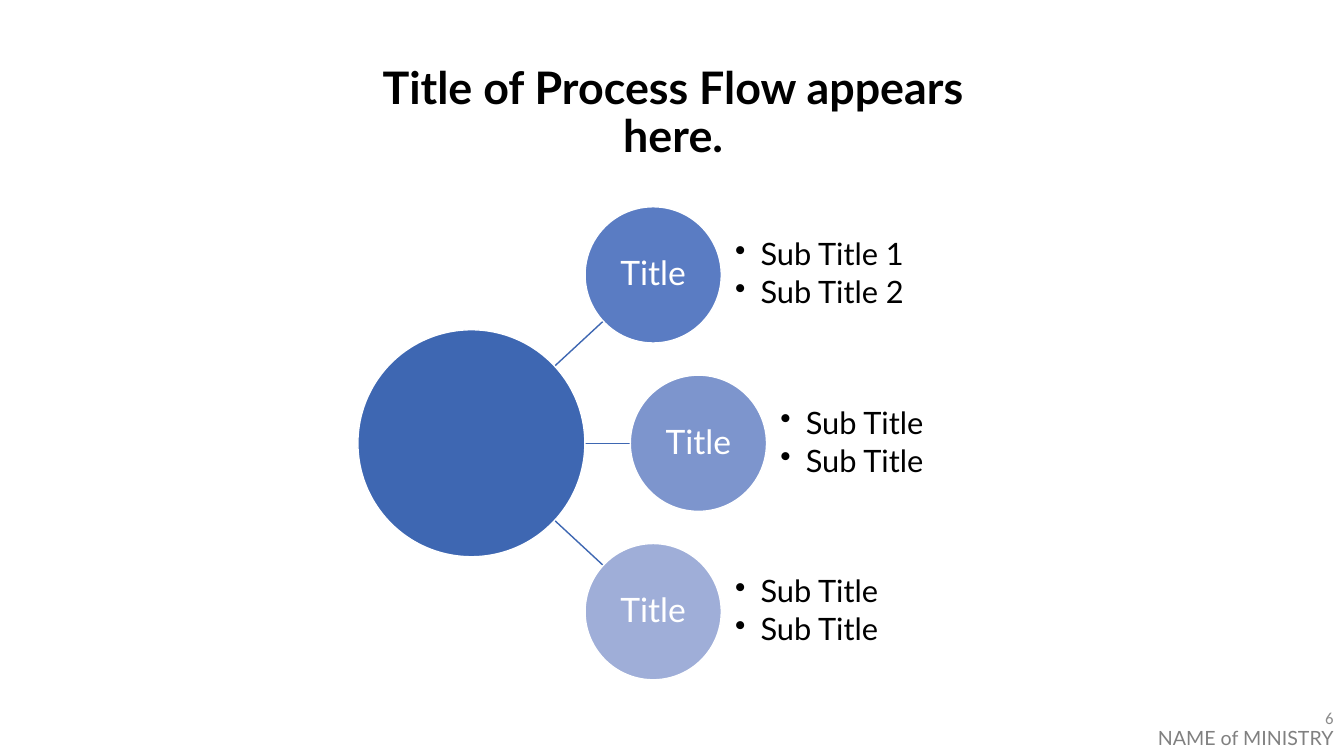
import math

import pptx
import pptx.dml.color
import pptx.enum.shapes
import pptx.enum.text
import pptx.oxml.xmlchemy
import pptx.util

COLOURS = {
    "hub": "3E67B2",
    "steps": ["5A7CC3", "7D95CD", "9FAED8"],
    "white": "FFFFFF",
    "black": "000000",
    "footer": "808080",
    "number": "8C8C8C",
}
STEPS = [
    ("Title", ["Sub Title 1", "Sub Title 2"]),
    ("Title", ["Sub Title", "Sub Title"]),
    ("Title", ["Sub Title", "Sub Title"]),
]
Cm = pptx.util.Cm
ANCHOR = pptx.enum.text.MSO_ANCHOR
ALIGN = pptx.enum.text.PP_ALIGN


def rgb(value):
    """Turn a hex string into a colour."""
    return pptx.dml.color.RGBColor.from_string(value)


def add_run(p, text, size, colour, font="Lato", bold=False):
    """Add one formatted run to a paragraph."""
    r = p.add_run()
    r.text = text
    r.font.name = font
    r.font.size = pptx.util.Pt(size)
    r.font.bold = bold
    r.font.color.rgb = rgb(colour)


def set_frame(tf, anchor, inset=None, wrap=True):
    """Set the anchor, wrapping and insets of a text frame."""
    tf.word_wrap = wrap
    tf.auto_size = pptx.enum.text.MSO_AUTO_SIZE.NONE
    tf.vertical_anchor = anchor
    if inset is not None:
        tf.margin_left = tf.margin_right = Cm(inset)
        tf.margin_top = tf.margin_bottom = Cm(inset)


def add_circle(s, cx, cy, radius, fill):
    """Draw a white-edged circle around a centre."""
    sp = s.shapes.add_shape(
        pptx.enum.shapes.MSO_SHAPE.OVAL,
        Cm(cx - radius), Cm(cy - radius), Cm(2 * radius), Cm(2 * radius))
    sp.shadow.inherit = False
    sp.fill.solid()
    sp.fill.fore_color.rgb = rgb(fill)
    sp.line.color.rgb = rgb(COLOURS["white"])
    sp.line.width = pptx.util.Pt(1)
    return sp


def add_spoke(s, x1, y1, x2, y2):
    """Draw a thin line from the hub to a step."""
    line = s.shapes.add_connector(
        pptx.enum.shapes.MSO_CONNECTOR.STRAIGHT, Cm(x1), Cm(y1), Cm(x2), Cm(y2))
    line.line.color.rgb = rgb(COLOURS["hub"])
    line.line.width = pptx.util.Pt(1)
    line._element.spPr.append(pptx.oxml.xmlchemy.OxmlElement("a:effectLst"))


def add_bullet(p):
    """Give a paragraph a round bullet with a hanging indent."""
    pPr = p._p.get_or_add_pPr()
    pPr.set("marL", str(int(Cm(0.64))))
    pPr.set("indent", str(-int(Cm(0.64))))
    bullet = pptx.oxml.xmlchemy.OxmlElement("a:buChar")
    bullet.set("char", "•")
    pPr.append(bullet)


def add_step(s, cx, cy, radius, fill, title, items):
    """Place a step circle with its bullet list to the right."""
    tf = add_circle(s, cx, cy, radius, fill).text_frame
    set_frame(tf, ANCHOR.MIDDLE, 0.04)
    p = tf.paragraphs[0]
    p.alignment = ALIGN.CENTER
    p.line_spacing = 0.9
    add_run(p, title, 24, COLOURS["white"])

    tf = s.shapes.add_textbox(
        Cm(cx + radius + 0.35), Cm(cy - radius), Cm(5.15), Cm(2 * radius)).text_frame
    set_frame(tf, ANCHOR.MIDDLE, 0)
    for i, item in enumerate(items):
        p = tf.add_paragraph() if i else tf.paragraphs[0]
        add_bullet(p)
        p.line_spacing = 0.9
        p.space_after = pptx.util.Pt(3.3)
        add_run(p, item, 22, COLOURS["black"])


def add_process(s, left, top, width, height):
    """Fan the steps out from a hub inside the given box."""
    hub_radius, radius = 0.18 * width, 0.144 * height
    hub_x, hub_y = left + hub_radius, top + height / 2
    pitch = (height - 2 * radius) / (len(STEPS) - 1)
    centres = []
    for i in range(len(STEPS)):
        offset = 4.58 if i in (0, len(STEPS) - 1) else 5.72
        centres.append((hub_x + offset, top + radius + i * pitch))
    for cx, cy in centres:
        angle = math.atan2(cy - hub_y, cx - hub_x)
        x1 = hub_x + 0.7 * hub_radius
        y1 = hub_y + 0.7 * hub_radius * math.tan(angle)
        add_spoke(s, x1, y1, cx - radius * math.cos(angle), cy - radius * math.sin(angle))
    add_circle(s, hub_x, hub_y, hub_radius, COLOURS["hub"])
    for (cx, cy), fill, (title, items) in zip(centres, COLOURS["steps"], STEPS):
        add_step(s, cx, cy, radius, fill, title, items)


def add_title(s, left, top, width, height):
    """Place and format the slide title."""
    sp = s.shapes.title
    sp.left, sp.top, sp.width, sp.height = Cm(left), Cm(top), Cm(width), Cm(height)
    set_frame(sp.text_frame, ANCHOR.TOP)
    p = sp.text_frame.paragraphs[0]
    p.alignment = ALIGN.CENTER
    p.line_spacing = 0.9
    add_run(p, "Title of Process Flow appears here.", 32, COLOURS["black"], bold=True)


def add_footer(s, left, top, width, height):
    """Place the slide number above the ministry name."""
    tf = s.shapes.add_textbox(Cm(left), Cm(top), Cm(width), Cm(1.02)).text_frame
    set_frame(tf, ANCHOR.MIDDLE)
    p = tf.paragraphs[0]
    p.alignment = ALIGN.RIGHT
    add_run(p, "6", 12, COLOURS["number"], "Calibri")

    tf = s.shapes.add_textbox(
        Cm(left + 2.69), Cm(top + 0.58), Cm(width - 2.69), Cm(height - 0.58)).text_frame
    set_frame(tf, ANCHOR.TOP, wrap=False)
    add_run(tf.paragraphs[0], "NAME of MINISTRY", 14, COLOURS["footer"])


def main():
    """Build the process flow slide and save it."""
    prs = pptx.Presentation()
    prs.slide_width, prs.slide_height = Cm(33.87), Cm(19.05)
    s = prs.slides.add_slide(prs.slide_layouts[5])
    add_footer(s, 26.24, 17.58, 7.62, 1.45)
    add_process(s, 9.02, 5.21, 15.89, 11.92)
    add_title(s, 8.33, 1.52, 17.27, 2.72)
    prs.save("out.pptx")


if __name__ == "__main__":
    main()
